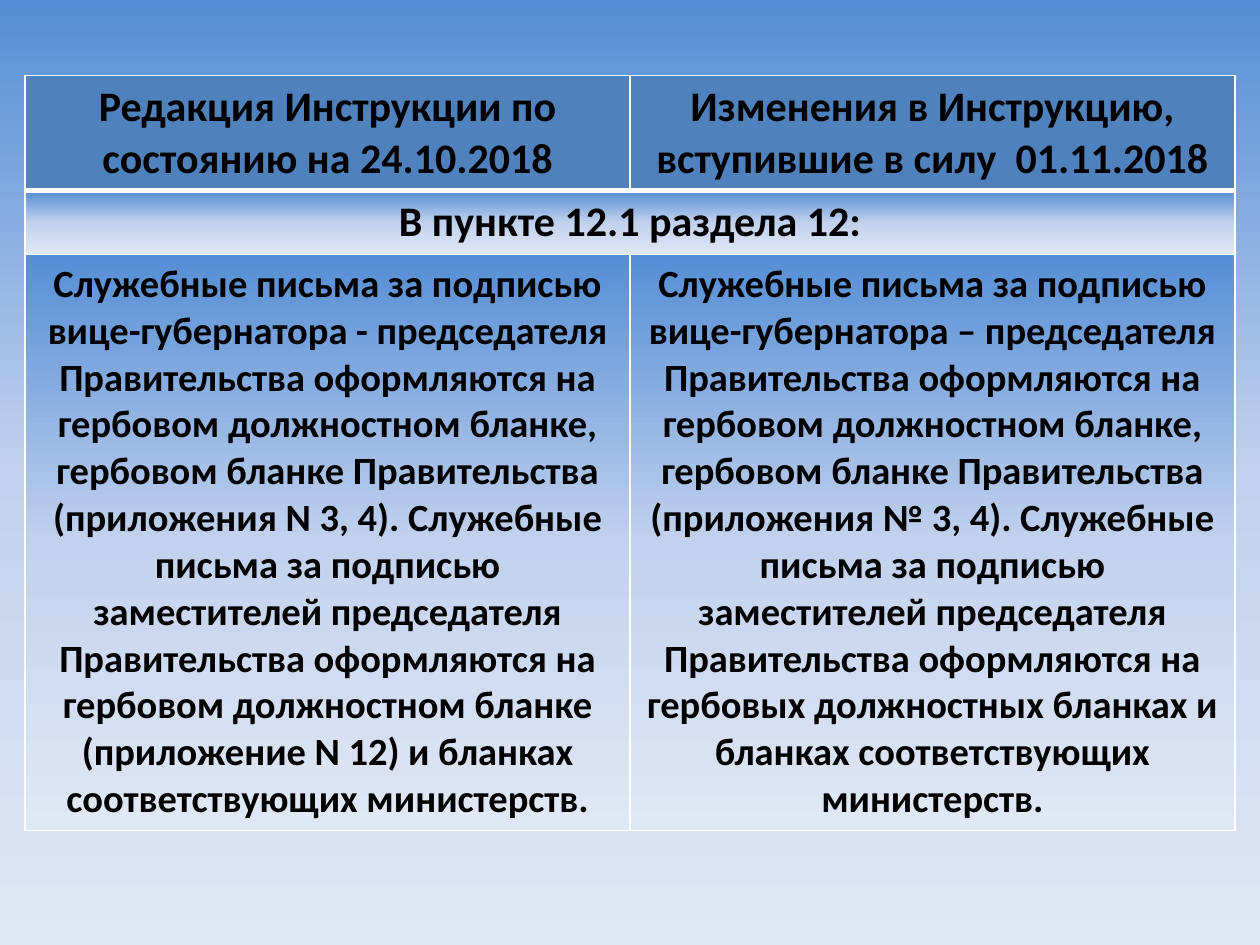
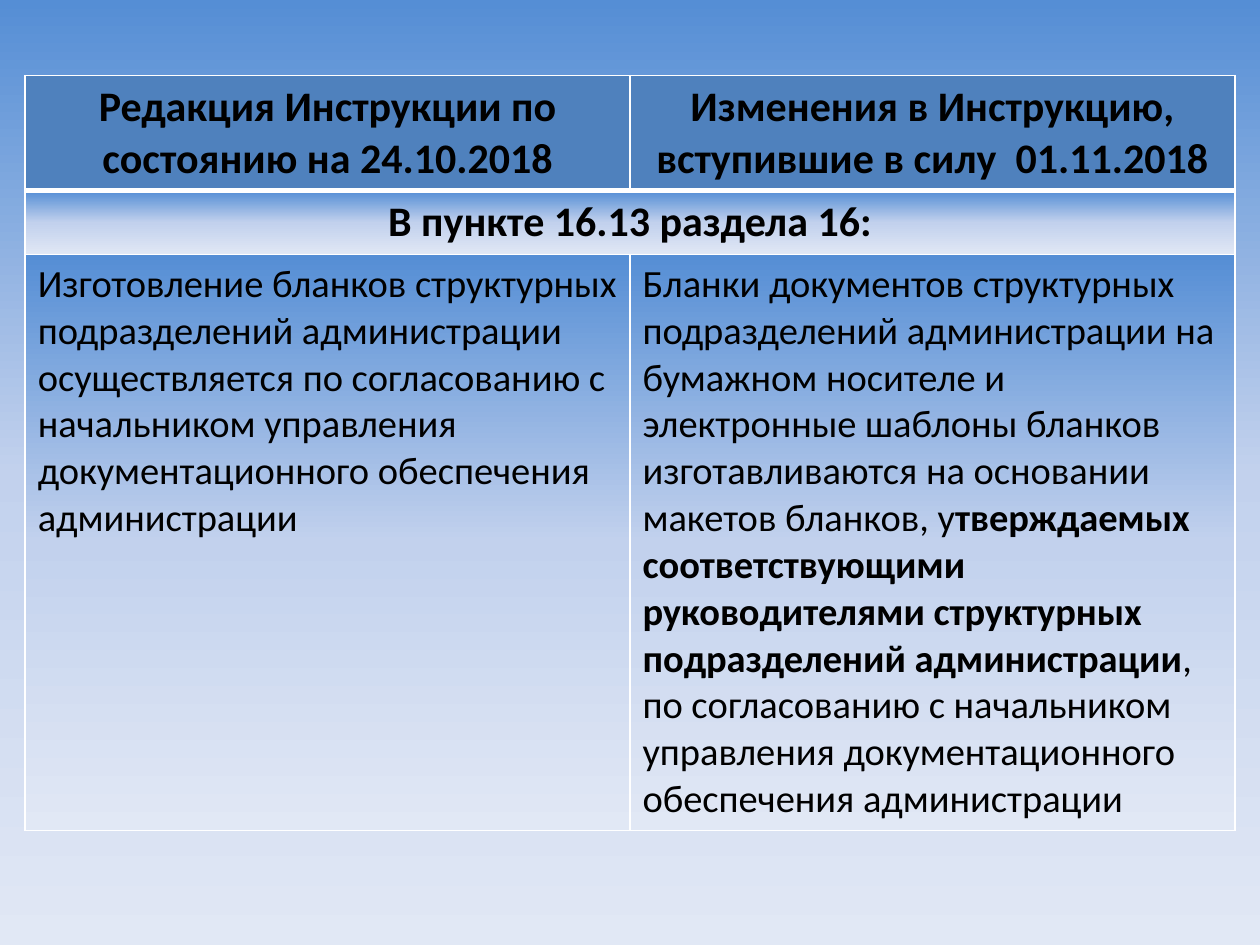
from copy import deepcopy

from lxml import etree
from pptx import Presentation
from pptx.dml.color import RGBColor
from pptx.enum.text import PP_ALIGN
from pptx.oxml.ns import qn
from pptx.util import Inches, Pt

LEFT = PP_ALIGN.LEFT
CENTER = PP_ALIGN.CENTER

BLACK = RGBColor(0x00, 0x00, 0x00)
WHITE = RGBColor(0xFF, 0xFF, 0xFF)
HEADER_BLUE = RGBColor(0x4F, 0x81, 0xBD)
GRADIENT = [
    (0, RGBColor(0x55, 0x8E, 0xD5)),
    (0.5, RGBColor(0xC2, 0xD1, 0xED)),
    (1, RGBColor(0xE1, 0xE8, 0xF5)),
]

FONT = "Calibri"
HEADING_SIZE = 24
BODY_SIZE = 22
THIN, THICK = 1, 3

COLUMN_WIDTH = 4.8
ROW_HEIGHTS = [0.91, 0.5, 4.57]

HEADINGS = [
    "Редакция Инструкции по состоянию на 24.10.2018",
    "Изменения в Инструкцию, вступившие в силу  01.11.2018",
]

LETTERS_OLD = (
    "Служебные письма за подписью вице-губернатора - председателя Правительства "
    "оформляются на гербовом должностном бланке, гербовом бланке Правительства "
    "(приложения N 3, 4). Служебные письма за подписью заместителей председателя "
    "Правительства оформляются на гербовом должностном бланке (приложение N 12) "
    "и бланках соответствующих министерств."
)
LETTERS_NEW = (
    "Служебные письма за подписью вице-губернатора – председателя Правительства "
    "оформляются на гербовом должностном бланке, гербовом бланке Правительства "
    "(приложения № 3, 4). Служебные письма за подписью заместителей председателя "
    "Правительства оформляются на гербовых должностных бланках и бланках "
    "соответствующих министерств."
)
FORMS_OLD = (
    "Изготовление бланков структурных подразделений администрации осуществляется "
    "по согласованию с начальником управления документационного обеспечения "
    "администрации"
)
FORMS_NEW_START = (
    "Бланки документов структурных подразделений администрации на бумажном "
    "носителе и электронные шаблоны бланков изготавливаются на основании макетов "
    "бланков, у"
)
FORMS_NEW_BOLD = (
    "тверждаемых соответствующими руководителями структурных подразделений "
    "администрации"
)
FORMS_NEW_END = (
    ", по согласованию с начальником управления документационного обеспечения "
    "администрации"
)


def set_gradient(fill, owner):
    """Give fill the shared vertical gradient; owner is the XML element around it."""
    fill.gradient()
    fill.gradient_angle = 270
    stop_list = next(owner.iter(qn("a:gsLst")))
    stop_list.append(deepcopy(stop_list[0]))
    for stop, (position, color) in zip(fill.gradient_stops, GRADIENT):
        stop.position = position
        stop.color.rgb = color


def set_borders(cell, top=THIN, bottom=THIN):
    """Draw white cell borders, with widths in points."""
    widths = {"a:lnL": THIN, "a:lnR": THIN, "a:lnT": top, "a:lnB": bottom}
    properties = cell._tc.get_or_add_tcPr()
    for index, (tag, width) in enumerate(widths.items()):
        line = etree.Element(qn(tag), w=str(Pt(width)))
        solid = etree.SubElement(line, qn("a:solidFill"))
        etree.SubElement(solid, qn("a:srgbClr"), val=str(WHITE))
        properties.insert(index, line)


def write_text(cell, spans, size=BODY_SIZE, align=CENTER):
    """Write (text, bold) spans as one paragraph."""
    para = cell.text_frame.paragraphs[0]
    para.alignment = align
    for text, bold in spans:
        span = para.add_run()
        span.text = text
        span.font.name = FONT
        span.font.size = Pt(size)
        span.font.bold = bold
        span.font.color.rgb = BLACK


class ComparisonDeck:
    def __init__(self):
        self.deck = Presentation()
        self.deck.slide_width = Inches(10)
        self.deck.slide_height = Inches(7.5)
        self.page = None

    def add_page(self):
        self.page = self.deck.slides.add_slide(self.deck.slide_layouts[6])
        set_gradient(self.page.background.fill, self.page._element)

    def add_comparison(self, clause, old, new, align):
        """Add the table that sets the old wording beside the new one."""
        table = self.page.shapes.add_table(
            3, 2, Inches(0.2), Inches(0.6),
            Inches(2 * COLUMN_WIDTH), Inches(sum(ROW_HEIGHTS)),
        ).table
        for column in table.columns:
            column.width = Inches(COLUMN_WIDTH)
        for row, height in zip(table.rows, ROW_HEIGHTS):
            row.height = Inches(height)

        header, band, body = [list(row.cells) for row in table.rows]
        for cell, heading in zip(header, HEADINGS):
            write_text(cell, [(heading, True)], size=HEADING_SIZE)
            cell.fill.solid()
            cell.fill.fore_color.rgb = HEADER_BLUE
            set_borders(cell, bottom=THICK)

        band[0].merge(band[1])
        write_text(band[0], [(clause, True)], size=HEADING_SIZE)
        for cell, spans in zip(body, (old, new)):
            write_text(cell, spans, align=align)

        for cells, top in ((band, THICK), (body, THIN)):
            for cell in cells:
                set_gradient(cell.fill, cell._tc)
                set_borders(cell, top=top)

    def save(self):
        self.deck.save("out.pptx")


def main():
    slides = ComparisonDeck()
    slides.add_page()
    slides.add_comparison(
        "В пункте 12.1 раздела 12:",
        old=[(LETTERS_OLD, True)],
        new=[(LETTERS_NEW, True)],
        align=CENTER,
    )
    slides.add_page()
    slides.add_comparison(
        "В пункте 16.13 раздела 16:",
        old=[(FORMS_OLD, False)],
        new=[(FORMS_NEW_START, False), (FORMS_NEW_BOLD, True), (FORMS_NEW_END, False)],
        align=LEFT,
    )
    slides.save()


if __name__ == "__main__":
    main()
